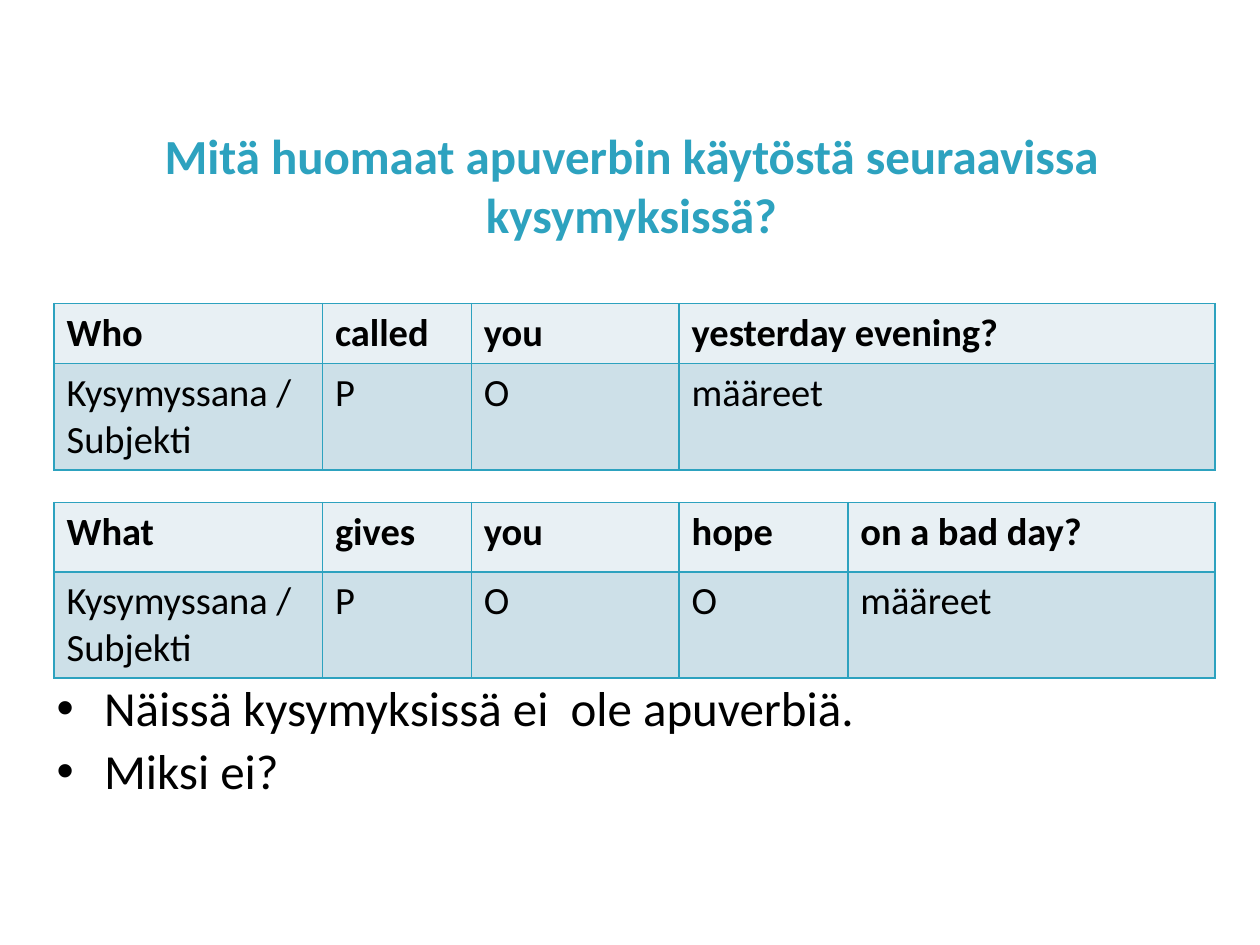
from dataclasses import dataclass

from lxml.etree import SubElement
from pptx import Presentation
from pptx.dml.color import RGBColor
from pptx.enum.text import MSO_ANCHOR, PP_ALIGN
from pptx.oxml.ns import qn
from pptx.util import Cm, Pt


@dataclass(frozen=True)
class Theme:
    font: str = "Calibri"
    accent: str = "2DA2BF"
    ink: str = "000000"
    header_fill: str = "E8F0F4"
    body_fill: str = "CDE0E8"
    large: int = 28
    cell: int = 22
    border: int = 1


class SlideBuilder:
    def __init__(self, slide, theme):
        self.slide = slide
        self.theme = theme

    def style(self, paragraph, size, color, bold=False):
        formats = {"name": self.theme.font, "size": Pt(size), "bold": bold}
        for run in paragraph.runs:
            for name, value in formats.items():
                setattr(run.font, name, value)
            run.font.color.rgb = RGBColor.from_string(color)

    def text_frame(self, left, top, width, height, anchor):
        box = self.slide.shapes.add_textbox(Cm(left), Cm(top), Cm(width), Cm(height))
        frame = box.text_frame
        for name, value in {"word_wrap": True, "vertical_anchor": anchor}.items():
            setattr(frame, name, value)
        return frame

    def title(self, text, *place):
        paragraph = self.text_frame(*place, MSO_ANCHOR.MIDDLE).paragraphs[0]
        paragraph.text = text
        paragraph.alignment = PP_ALIGN.CENTER
        self.style(paragraph, self.theme.large, self.theme.accent, bold=True)

    def bullets(self, lines, *place):
        frame = self.text_frame(*place, MSO_ANCHOR.TOP)
        frame.text = "\n".join(lines)
        for index, paragraph in enumerate(frame.paragraphs):
            properties = paragraph._p.get_or_add_pPr()
            properties.set("marL", str(Cm(0.96)))
            properties.set("indent", str(Cm(-0.96)))
            SubElement(properties, qn("a:buFont"), typeface="Arial")
            SubElement(properties, qn("a:buChar"), char="•")
            paragraph.line_spacing = 0.9
            if index:
                paragraph.space_before = Pt(5.6)
            self.style(paragraph, self.theme.large, self.theme.ink)

    def borders(self, cell):
        properties = cell._tc.get_or_add_tcPr()
        for side in ("a:lnL", "a:lnR", "a:lnT", "a:lnB"):
            line = SubElement(properties, qn(side), w=str(Pt(self.theme.border)))
            fill = SubElement(line, qn("a:solidFill"))
            SubElement(fill, qn("a:srgbClr"), val=self.theme.accent)

    def table(self, rows, left, top, widths, heights):
        table = self.slide.shapes.add_table(
            len(rows), len(widths), Cm(left), Cm(top),
            Cm(sum(widths)), Cm(sum(heights))).table
        for column, width in zip(table.columns, widths):
            column.width = Cm(width)
        for row, height in zip(table.rows, heights):
            row.height = Cm(height)
        for row_index, texts in enumerate(rows):
            header = row_index == 0
            fill = self.theme.header_fill if header else self.theme.body_fill
            for column_index, text in enumerate(texts):
                cell = table.cell(row_index, column_index)
                cell.text = text
                self.borders(cell)
                cell.fill.solid()
                cell.fill.fore_color.rgb = RGBColor.from_string(fill)
                for paragraph in cell.text_frame.paragraphs:
                    self.style(paragraph, self.theme.cell, self.theme.ink, header)


def main():
    presentation = Presentation()
    presentation.slide_width = Cm(25.4)
    presentation.slide_height = Cm(19.05)
    slide = presentation.slides.add_slide(presentation.slide_layouts[6])
    builder = SlideBuilder(slide, Theme())

    # Heading
    builder.title("Mitä huomaat apuverbin käytöstä seuraavissa kysymyksissä?",
                  1.3, 2.13, 22.86, 3.18)

    # Example questions with their sentence parts
    subject = "Kysymyssana /\nSubjekti"
    shared_widths = [5.41, 3, 4.19]
    answer_height = 2.14
    builder.table([["Who", "called", "you", "yesterday evening?"],
                   [subject, "P", "O", "määreet"]],
                  1.09, 6.12, shared_widths + [10.8], [1.21, answer_height])
    builder.table([["What", "gives", "you", "hope", "on a bad day?"],
                   [subject, "P", "O", "O", "määreet"]],
                  1.09, 10.13, shared_widths + [3.4, 7.4], [1.4, answer_height])

    # Conclusions
    builder.bullets(["Näissä kysymyksissä ei  ole apuverbiä.", "Miksi ei?"],
                    0.89, 13.67, 23.04, 2.6)

    presentation.save("out.pptx")


if __name__ == "__main__":
    main()
